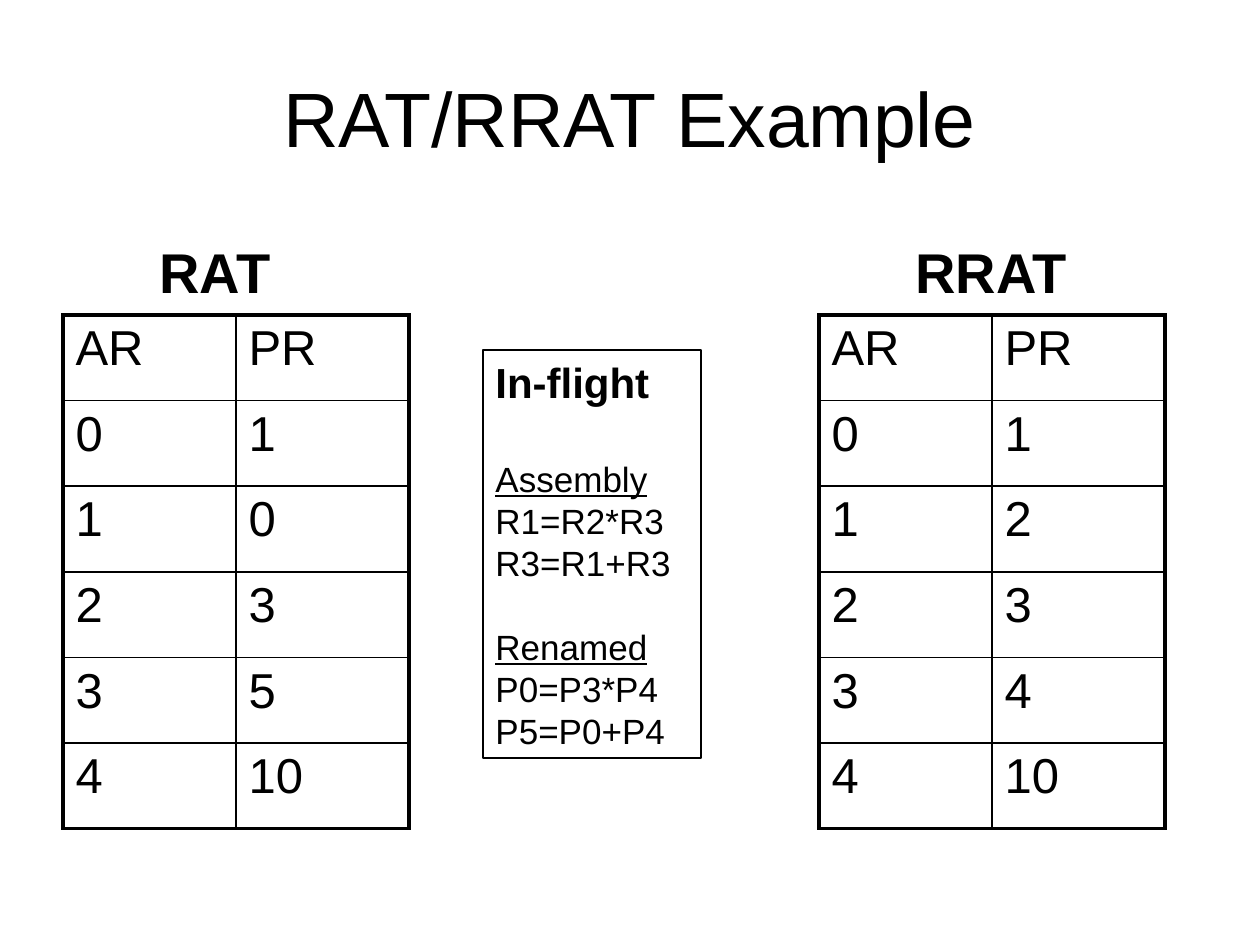
from lxml import etree
from pptx import Presentation
from pptx import util as u
from pptx.dml.color import RGBColor
from pptx.enum import shapes, text
from pptx.oxml.ns import qn

PX = 914400 / 126
FONT = "Arial"
COLORS = {"ink": "000000"}
THIN, THICK = 1, 2.25

RAT = [("AR", "PR"), ("0", "1"), ("1", "0"), ("2", "3"), ("3", "5"), ("4", "10")]
RRAT = [("AR", "PR"), ("0", "1"), ("1", "2"), ("2", "3"), ("3", "4"), ("4", "10")]
IN_FLIGHT = [
    ("Assembly", ["R1=R2*R3", "R3=R1+R3"]),
    ("Renamed", ["P0=P3*P4", "P5=P0+P4"]),
]


def emu(*lengths):
    """Turn px lengths into EMU."""
    return [u.Emu(round(length * PX)) for length in lengths]


def color(name):
    """Look up a named colour."""
    return RGBColor.from_string(COLORS[name])


def add_span(para, words, size, bold=False, underline=False):
    """Add one styled run to a paragraph."""
    span = para.add_run()
    span.text = words
    span.font.name = FONT
    span.font.size = u.Pt(size)
    span.font.bold = bold
    span.font.underline = underline
    span.font.color.rgb = color("ink")


def add_title(page, box, words):
    """Place the centred slide title."""
    frame = page.shapes.add_textbox(*emu(*box)).text_frame
    frame.word_wrap = True
    frame.vertical_anchor = text.MSO_ANCHOR.MIDDLE
    para = frame.paragraphs[0]
    para.alignment = text.PP_ALIGN.CENTER
    add_span(para, words, 44)


def add_heading(page, box, words):
    """Place a bold heading above a table."""
    frame = page.shapes.add_textbox(*emu(*box)).text_frame
    frame.word_wrap = False
    frame.auto_size = text.MSO_AUTO_SIZE.SHAPE_TO_FIT_TEXT
    add_span(frame.paragraphs[0], words, 32, bold=True)


def set_borders(cell, widths):
    """Draw the four cell borders: left, right, top and bottom."""
    props = cell._tc.get_or_add_tcPr()
    for index, (side, width) in enumerate(zip("LRTB", widths)):
        line = etree.Element(qn("a:ln" + side), w=str(u.Pt(width)))
        fill = etree.SubElement(line, qn("a:solidFill"))
        etree.SubElement(fill, qn("a:srgbClr"), val=COLORS["ink"])
        props.insert(index, line)


def add_map_table(page, box, rows):
    """Place a register table with a thick outer frame."""
    last_row, last_column = len(rows) - 1, len(rows[0]) - 1
    table = page.shapes.add_table(len(rows), len(rows[0]), *emu(*box)).table
    table.first_row = table.horz_banding = False
    for r, values in enumerate(rows):
        for c, value in enumerate(values):
            cell = table.cell(r, c)
            cell.fill.background()
            add_span(cell.text_frame.paragraphs[0], value, 28)
            outer = (c == 0, c == last_column, r == 0, r == last_row)
            set_borders(cell, [THICK if edge else THIN for edge in outer])


def add_map(page, box, name, name_width, rows):
    """Place a register table with its heading on top."""
    left, top, width, height = box
    add_heading(page, (left + 84, top, name_width, 79), name)
    add_map_table(page, (left, top + 84, width, height - 84), rows)


def add_in_flight(page, box, groups):
    """Place the framed list of instructions in flight."""
    panel = page.shapes.add_shape(shapes.MSO_SHAPE.RECTANGLE, *emu(*box))
    panel.shadow.inherit = False
    panel.fill.background()
    panel.line.color.rgb = color("ink")
    panel.line.width = u.Pt(0.75)
    frame = panel.text_frame
    frame.word_wrap = False
    frame.auto_size = text.MSO_AUTO_SIZE.SHAPE_TO_FIT_TEXT
    frame.vertical_anchor = text.MSO_ANCHOR.TOP

    def add_line(para, words, size, gap=0, **style):
        """Fill one paragraph at fixed line height."""
        para.alignment = text.PP_ALIGN.LEFT
        para.line_spacing = u.Pt(size * 1.2)
        para.space_before = u.Pt(gap)
        add_span(para, words, size, **style)

    add_line(frame.paragraphs[0], "In-flight", 24, bold=True)
    for (name, lines), gap in zip(groups, (28.8, 24)):
        add_line(frame.add_paragraph(), name, 20, gap, underline=True)
        for words in lines:
            add_line(frame.add_paragraph(), words, 20)


def main():
    """Build and save the deck."""
    deck = Presentation()
    deck.slide_width, deck.slide_height = emu(1260, 945)
    page = deck.slides.add_slide(deck.slide_layouts[6])
    add_title(page, (63, 38, 1134, 158), "RAT/RRAT Example")
    add_map(page, (63, 231, 346, 598), "RAT", 140, RAT)
    add_in_flight(page, (483, 350, 218, 408), IN_FLIGHT)
    add_map(page, (819, 231, 346, 598), "RRAT", 181, RRAT)
    deck.save("out.pptx")


if __name__ == "__main__":
    main()
